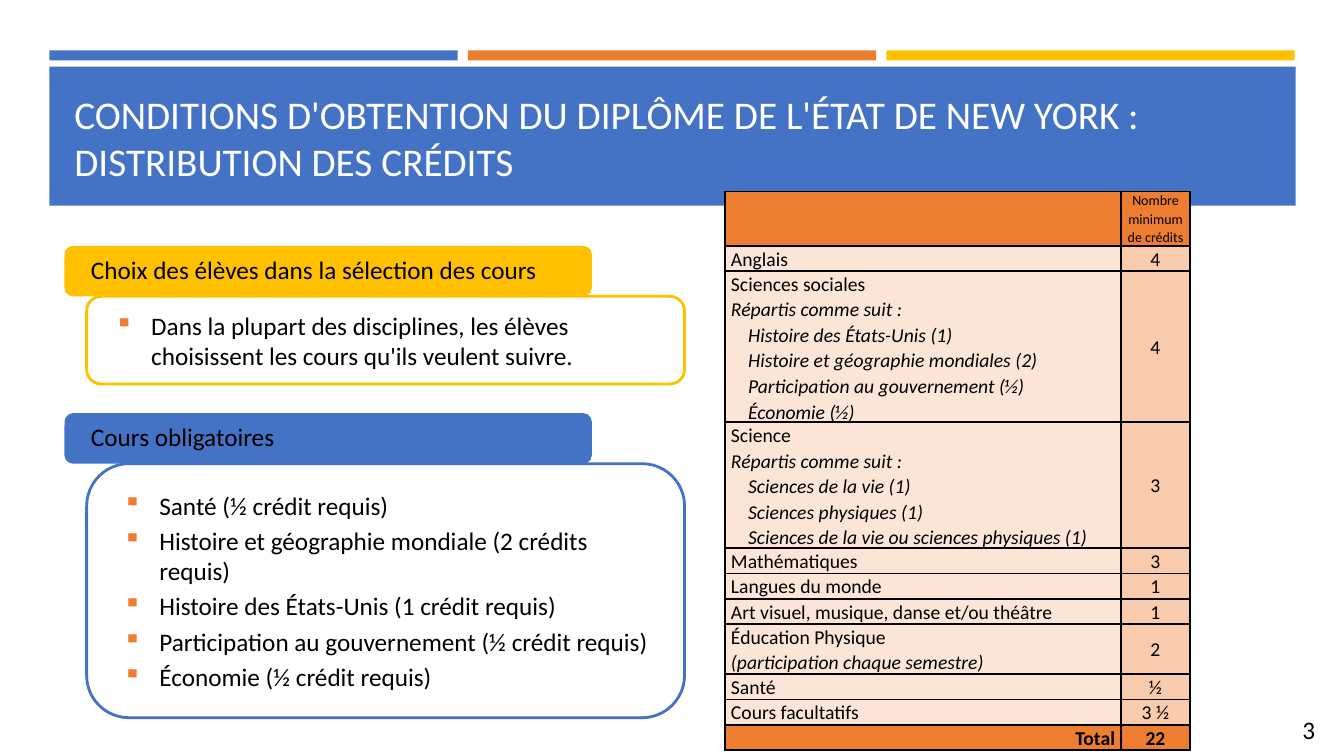
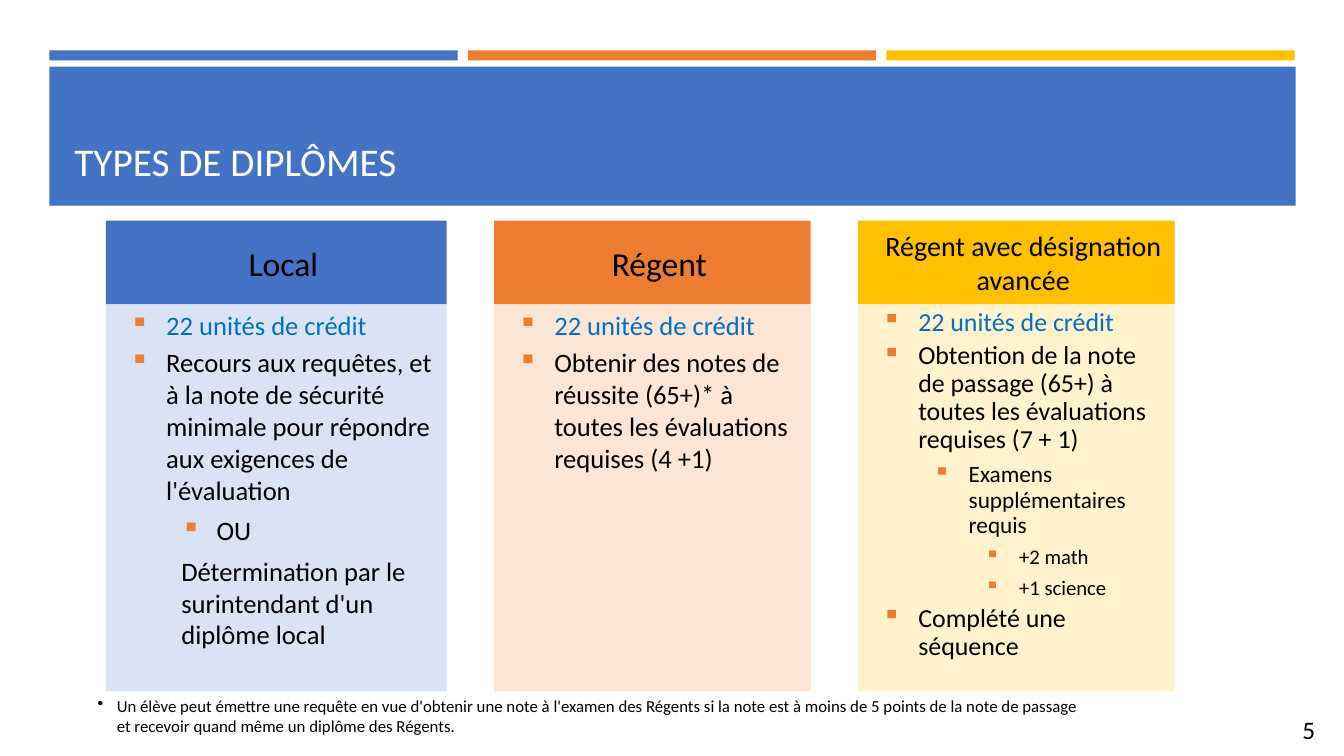
from dataclasses import dataclass

from lxml.etree import SubElement
from pptx import Presentation
from pptx.dml.color import RGBColor
from pptx.enum.shapes import MSO_SHAPE as Shape
from pptx.enum.text import MSO_ANCHOR as Anchor, PP_ALIGN as Align
from pptx.oxml.ns import qn
from pptx.util import Emu, Pt

PX = 9144
FONT = "Calibri"
BLACK = RGBColor(0x00, 0x00, 0x00)
WHITE = RGBColor(0xFF, 0xFF, 0xFF)
BLUE = RGBColor(0x44, 0x72, 0xC4)
ORANGE = RGBColor(0xED, 0x7D, 0x31)
GOLD = RGBColor(0xFF, 0xC0, 0x00)
ACCENT = RGBColor(0x00, 0x70, 0xC0)
BLUE_TINT = RGBColor(0xDA, 0xE3, 0xF3)
ORANGE_TINT = RGBColor(0xFB, 0xE5, 0xD6)
GOLD_TINT = RGBColor(0xFF, 0xF2, 0xCC)
PEACH = RGBColor(0xF8, 0xCB, 0xAD)
BULLET_INDENTS = [(50, -36), (100, -35), (150, -34)]
LINE_HEIGHT = 25

CREDITS = [
    (["Anglais"], "4"),
    (["Sciences sociales", "Répartis comme suit :", "Histoire des États-Unis (1)",
      "Histoire et géographie mondiales (2)", "Participation au gouvernement (½)",
      "Économie (½)"], "4"),
    (["Science", "Répartis comme suit :", "Sciences de la vie (1)",
      "Sciences physiques (1)", "Sciences de la vie ou sciences physiques (1)"], "3"),
    (["Mathématiques"], "3"),
    (["Langues du monde"], "1"),
    (["Art visuel, musique, danse et/ou théâtre"], "1"),
    (["Éducation Physique", "(participation chaque semestre)"], "2"),
    (["Santé"], "½"),
    (["Cours facultatifs"], "3 ½"),
]


@dataclass
class Para:
    """One paragraph and its formatting."""
    text: str
    size: float = 18
    color: RGBColor = BLACK
    indent: tuple = (0, 0)
    bullet: str = ""
    bullet_color: RGBColor = ORANGE
    before: float = 0
    spacing: float = 1.0
    align: Align = Align.LEFT
    bold: bool = False
    italic: bool = False


def px(n):
    """Turn px into EMU."""
    return Emu(n * PX)


def bullet(text, size=18, level=0, **options):
    """Return a square-bulleted paragraph of the given level."""
    return Para(text, size, indent=BULLET_INDENTS[level], bullet="▪",
                before=6 if level else 3.6, **options)


def write(tf, paras):
    """Fill a text frame with paragraphs."""
    for i, para in enumerate(paras):
        p = tf.add_paragraph() if i else tf.paragraphs[0]
        p.text = para.text
        pPr = p._p.get_or_add_pPr()
        left, first = para.indent
        pPr.set("marL", str(px(left)))
        pPr.set("indent", str(px(first)))
        if para.bullet:
            clr = SubElement(pPr, qn("a:buClr"))
            SubElement(clr, qn("a:srgbClr")).set("val", str(para.bullet_color))
            SubElement(pPr, qn("a:buChar")).set("char", para.bullet)
        p.alignment = para.align
        p.line_spacing = para.spacing
        p.space_before = Pt(para.before if i else 0)
        for r in p.runs:
            r.font.name = FONT
            r.font.size = Pt(para.size)
            r.font.color.rgb = para.color
            r.font.bold = para.bold
            r.font.italic = para.italic


def add_text(s, box, paras, anchor=Anchor.TOP):
    """Add a wrapping text box."""
    tf = s.shapes.add_textbox(*map(px, box)).text_frame
    tf.word_wrap = True
    tf.vertical_anchor = anchor
    write(tf, paras)


def add_box(s, box, fill=None, line=None, paras=(), shape=Shape.RECTANGLE,
            anchor=Anchor.MIDDLE):
    """Add a flat shape that may hold text."""
    sp = s.shapes.add_shape(shape, *map(px, box))
    sp.shadow.inherit = False
    if fill is None:
        sp.fill.background()
    else:
        sp.fill.solid()
        sp.fill.fore_color.rgb = fill
    if line is None:
        sp.line.fill.background()
    else:
        sp.line.color.rgb = line
        sp.line.width = Pt(2)
    tf = sp.text_frame
    tf.word_wrap = True
    tf.vertical_anchor = anchor
    write(tf, paras)


def add_slide(prs, title, number):
    """Add a slide with the shared bands, title and page number."""
    s = prs.slides.add_slide(prs.slide_layouts[6])
    for i, color in enumerate((BLUE, ORANGE, GOLD)):
        add_box(s, (49 + 415 * i, 50, 405, 10), color)
    add_box(s, (49, 66, 1236, 138), BLUE)
    add_text(s, (64, 80, 1206, 108), [Para(title, 28, WHITE)], Anchor.BOTTOM)
    add_text(s, (1263, 704, 70, 40), [Para(str(number), align=Align.CENTER)])
    return s


def add_topic(s, top, height, color, heading, items):
    """Add a rounded heading tab above an outlined list."""
    add_box(s, (64, top, 523, 50), color,
            paras=[Para(heading, indent=(14, 0), spacing=0.9)],
            shape=Shape.ROUNDED_RECTANGLE)
    add_box(s, (86, top + 50, 593, height), line=color,
            paras=[bullet(item) for item in items],
            shape=Shape.ROUNDED_RECTANGLE)


def add_column(s, left, width, color, tint, heading, paras):
    """Add a diploma column with a heading and a tinted body."""
    add_box(s, (left, 219, width, 83), color, paras=[heading])
    add_box(s, (left, 302, width, 384), tint, paras=paras, anchor=Anchor.TOP)


def heading(text, size=24):
    """Return the heading paragraph of a diploma column."""
    return Para(text, size, indent=(14, 0), align=Align.CENTER)


def format_cell(cell, fill, paras, anchor=Anchor.TOP):
    """Fill a table cell, set its margins and rule its borders."""
    cell.margin_left = cell.margin_right = px(6)
    cell.margin_top = cell.margin_bottom = 0
    cell.vertical_anchor = anchor
    write(cell.text_frame, paras)
    tcPr = cell._tc.get_or_add_tcPr()
    for side in ("lnL", "lnR", "lnT", "lnB"):
        ln = SubElement(tcPr, qn(f"a:{side}"), w=str(Pt(1.5)))
        SubElement(SubElement(ln, qn("a:solidFill")), qn("a:srgbClr"), val=str(BLACK))
    cell.fill.solid()
    cell.fill.fore_color.rgb = fill


def table_para(text, size=14, **options):
    """Return a paragraph in the table's line spacing."""
    return Para(text, size, spacing=1.07, **options)


def subject_paras(lines):
    """Return a subject and its italic, indented details."""
    return [table_para(text, italic=i > 0, indent=(17 if i > 1 else 0, 0))
            for i, text in enumerate(lines)]


def add_credit_table(s):
    """Add the table of credits by subject."""
    heights = [54] + [LINE_HEIGHT * len(lines) for lines, _ in CREDITS] + [LINE_HEIGHT]
    widths = (393, 68)
    table = s.shapes.add_table(len(heights), 2, px(719), px(190),
                               px(sum(widths)), px(sum(heights))).table
    for column, width in zip(table.columns, widths):
        column.width = px(width)
    for row, height in zip(table.rows, heights):
        row.height = px(height)
    center = Align.CENTER
    rows = [([], table_para("Nombre minimum de crédits", 10, align=center), ORANGE, ORANGE)]
    rows += [(subject_paras(lines), table_para(credit, align=center), ORANGE_TINT, PEACH)
             for lines, credit in CREDITS]
    rows.append(([table_para("Total", align=Align.RIGHT, bold=True)],
                 table_para("22", align=center, bold=True), ORANGE, ORANGE))
    for i, (subject, credit, subject_fill, credit_fill) in enumerate(rows):
        format_cell(table.cell(i, 0), subject_fill, subject)
        format_cell(table.cell(i, 1), credit_fill, [credit], Anchor.MIDDLE)


def build_credits(prs):
    """Build the slide on the distribution of credits."""
    s = add_slide(prs, "CONDITIONS D'OBTENTION DU DIPLÔME DE L'ÉTAT DE NEW YORK : "
                       "DISTRIBUTION DES CRÉDITS", 3)
    add_topic(s, 244, 87, GOLD, "Choix des élèves dans la sélection des cours", [
        "Dans la plupart des disciplines, les élèves choisissent les cours "
        "qu'ils veulent suivre."])
    add_topic(s, 410, 252, BLUE, "Cours obligatoires", [
        "Santé (½ crédit requis)",
        "Histoire et géographie mondiale (2 crédits requis)",
        "Histoire des États-Unis (1 crédit requis)",
        "Participation au gouvernement (½ crédit requis)",
        "Économie (½ crédit requis)"])
    add_credit_table(s)


def build_diplomas(prs):
    """Build the slide on the types of diploma."""
    s = add_slide(prs, "TYPES DE DIPLÔMES", 5)
    units = "22 unités de crédit"
    tight = {"spacing": 0.9}
    columns = [
        (338, BLUE, BLUE_TINT, heading("Local"), [
            bullet(units, 19, color=ACCENT),
            bullet("Recours aux requêtes, et à la note de sécurité minimale pour "
                   "répondre aux exigences de l'évaluation", 19),
            bullet("OU", 19, 1),
            Para("Détermination par le surintendant d'un diplôme local", 19,
                 indent=(65, 0), before=6)]),
        (314, ORANGE, ORANGE_TINT, heading("Régent"), [
            bullet(units, 19, color=ACCENT),
            bullet("Obtenir des notes de réussite (65+)* à toutes les évaluations "
                   "requises (4 +1)", 19)]),
        (314, GOLD, GOLD_TINT, heading("Régent avec désignation avancée", 20), [
            bullet(units, 18.5, color=ACCENT, **tight),
            bullet("Obtention de la note de passage (65+) à toutes les évaluations "
                   "requises (7 + 1)", 18.5, **tight),
            bullet("Examens supplémentaires requis", 16.6, 1, **tight),
            bullet("+2 math", 14.8, 2, **tight),
            bullet("+1 science", 14.8, 2, **tight),
            bullet("Complété une séquence", 18.5, **tight)]),
    ]
    left = 105
    for width, *content in columns:
        add_column(s, left, width, *content)
        left += width + 47
    add_text(s, (87, 685, 1004, 50), [Para(
        "Un élève peut émettre une requête en vue d'obtenir une note à l'examen des "
        "Régents si la note est à moins de 5 points de la note de passage\v"
        "et recevoir quand même un diplôme des Régents.",
        12, indent=(19, -19), bullet="•", bullet_color=BLACK)])


def main():
    """Build and save the presentation."""
    prs = Presentation()
    prs.slide_width, prs.slide_height = px(1333), px(750)
    build_credits(prs)
    build_diplomas(prs)
    prs.save("out.pptx")


if __name__ == "__main__":
    main()
